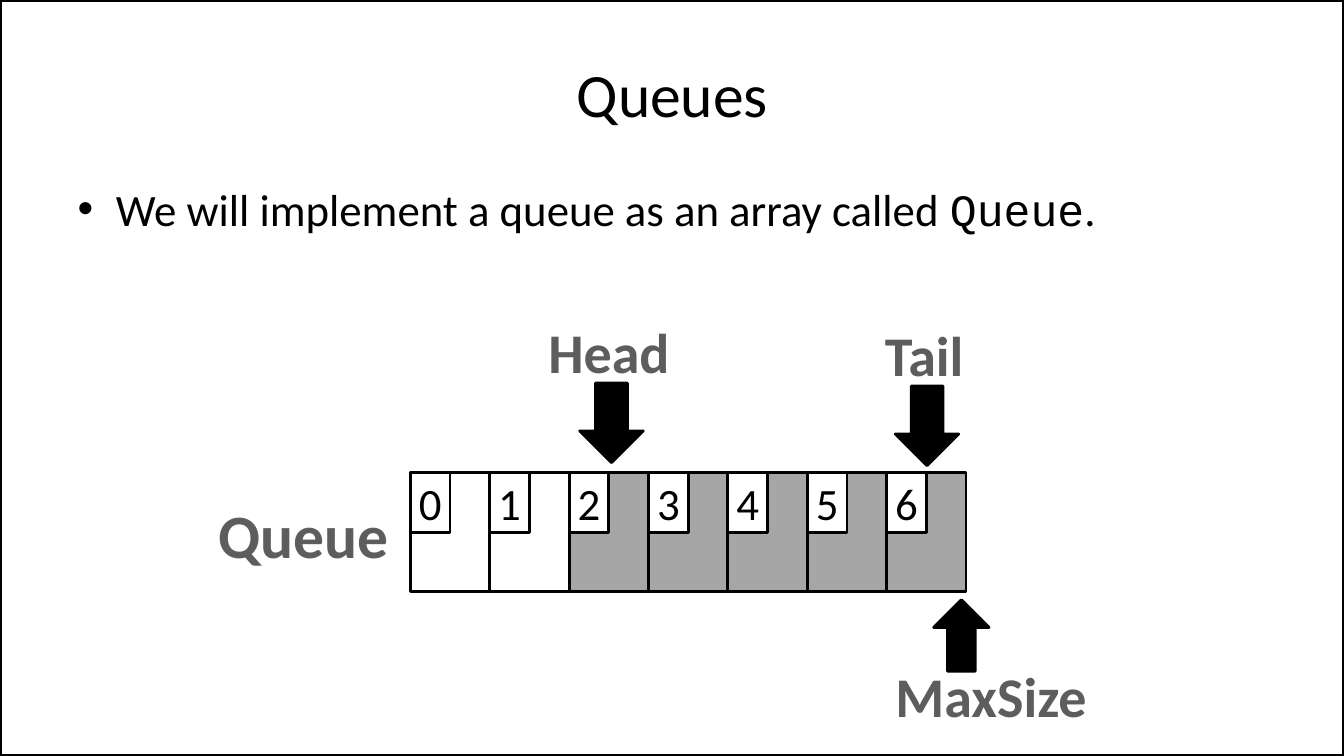
import pptx
import pptx.dml.color
import pptx.enum.shapes
import pptx.enum.text
import pptx.oxml
import pptx.util

Inches = pptx.util.Inches
Pt = pptx.util.Pt
Shape = pptx.enum.shapes.MSO_SHAPE
Align = pptx.enum.text.PP_ALIGN
Anchor = pptx.enum.text.MSO_ANCHOR
BLACK, WHITE, GREY, DARK = "000000", "FFFFFF", "A6A6A6", "5D5D5D"


def color(code):
    return pptx.dml.color.RGBColor.from_string(code)


def add_run(para, text, size, font="Calibri", code=BLACK, bold=False):
    run = para.add_run()
    run.text = text
    run.font.name = font
    run.font.size = Pt(size)
    run.font.bold = bold
    run.font.color.rgb = color(code)


def place(shape, left, top, width, height):
    shape.left, shape.top = Inches(left), Inches(top)
    shape.width, shape.height = Inches(width), Inches(height)


def add_box(slide, kind, left, top, width, height, fill, line=2):
    box = slide.shapes.add_shape(
        kind, Inches(left), Inches(top), Inches(width), Inches(height))
    box.shadow.inherit = False
    if fill:
        box.fill.solid()
        box.fill.fore_color.rgb = color(fill)
    else:
        box.fill.background()
    box.line.color.rgb = color(BLACK)
    box.line.width = Pt(line)
    return box


def add_label(slide, text, left, top, width, height, size):
    box = slide.shapes.add_textbox(
        Inches(left), Inches(top), Inches(width), Inches(height))
    box.text_frame.word_wrap = False
    para = box.text_frame.paragraphs[0]
    para.alignment = Align.CENTER
    add_run(para, text, size, code=DARK, bold=True)


def add_title(slide, text):
    title = slide.shapes.title
    place(title, 0.67, 0.3, 12, 1.25)
    title.text_frame.vertical_anchor = Anchor.MIDDLE
    para = title.text_frame.paragraphs[0]
    para.alignment = Align.CENTER
    add_run(para, text, 44)


def add_list(slide, parts):
    body = slide.placeholders[1]
    place(body, 0.67, 1.75, 12, 4.95)
    para = body.text_frame.paragraphs[0]
    props = para._p.get_or_add_pPr()
    props.set("marL", str(Inches(0.38)))
    props.set("indent", str(Inches(-0.38)))
    space = pptx.oxml.ns.nsdecls("a")
    props.append(pptx.oxml.parse_xml(f'<a:buChar {space} char="•"/>'))
    for text, font in parts:
        add_run(para, text, 32, font)


def add_queue(slide, count, head):
    left, top, width, height = 4.07, 4.69, 0.7875, 1.18
    spots = [left + i * width for i in range(count)]
    for i, spot in enumerate(spots):
        fill = GREY if i >= head else WHITE
        add_box(slide, Shape.RECTANGLE, spot, top, width, height, fill)
    for i, spot in enumerate(spots):
        tag = add_box(slide, Shape.RECTANGLE, spot, top,
                      width / 2, height / 2, WHITE)
        frame = tag.text_frame
        frame.word_wrap = False
        frame.margin_left = frame.margin_right = 0
        frame.margin_top = frame.margin_bottom = 0
        frame.vertical_anchor = Anchor.MIDDLE
        para = frame.paragraphs[0]
        para.alignment = Align.CENTER
        add_run(para, str(i), 32)


def main():
    deck = pptx.Presentation()
    deck.slide_width, deck.slide_height = Inches(13.33), Inches(7.5)
    slide = deck.slides.add_slide(deck.slide_layouts[1])
    add_box(slide, Shape.RECTANGLE, 0, 0, 13.33, 7.5, None, 3)
    add_title(slide, "Queues")
    add_list(slide, [
        ("We will implement a queue as an array called ", "Calibri"),
        ("Queue", "Courier New"),
        (".", "Calibri"),
    ])
    add_queue(slide, 7, 2)
    add_label(slide, "Queue", 2.06, 4.88, 1.91, 0.84, 44)
    add_label(slide, "MaxSize", 8.77, 6.51, 2.12, 0.77, 40)
    add_box(slide, Shape.UP_ARROW, 9.26, 5.95, 0.55, 0.71, BLACK)
    add_label(slide, "Head", 5.33, 3.1, 1.42, 0.77, 40)
    add_box(slide, Shape.DOWN_ARROW, 5.75, 3.8, 0.63, 0.79, BLACK)
    add_label(slide, "Tail", 8.67, 3.13, 0.99, 0.77, 40)
    add_box(slide, Shape.DOWN_ARROW, 8.88, 3.83, 0.63, 0.79, BLACK)
    deck.save("out.pptx")


if __name__ == "__main__":
    main()
